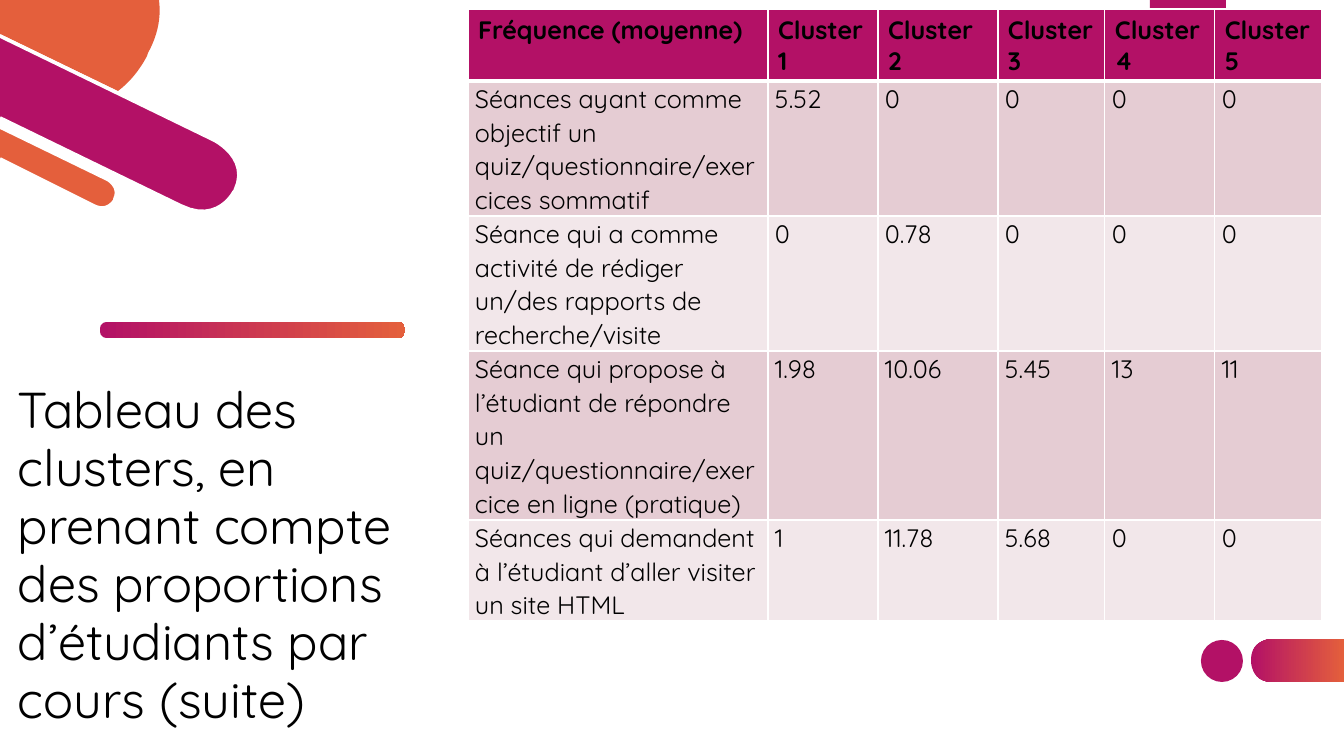
"""Build the slide with the table of cluster frequencies."""
from dataclasses import dataclass

from lxml.etree import SubElement
from pptx import Presentation
from pptx.dml.color import RGBColor
from pptx.enum.shapes import MSO_SHAPE
from pptx.enum.text import MSO_ANCHOR
from pptx.oxml.ns import qn
from pptx.util import Emu, Pt

TITLE = "Tableau des clusters, en prenant compte des proportions d’étudiants par cours (suite)"
HEADER = ["Fréquence (moyenne)", *(f"Cluster {n}" for n in range(1, 6))]
FREQUENCIES = [
    ("Séances ayant comme objectif un quiz/questionnaire/exercices sommatif",
     "5.52", "0", "0", "0", "0"),
    ("Séance qui a comme activité de rédiger un/des rapports de recherche/visite",
     "0", "0.78", "0", "0", "0"),
    ("Séance qui propose à l’étudiant de répondre un quiz/questionnaire/exercice en ligne (pratique)",
     "1.98", "10.06", "5.45", "13", "11"),
    ("Séances qui demandent à l’étudiant d’aller visiter un site HTML",
     "1", "11.78", "5.68", "0", "0"),
]
COLUMN_WIDTHS = (300, 110, 120, 107, 110, 107)
ROW_HEIGHTS = (72, 135, 135, 169, 101)

# Outlines hold points (x, y) and curves (x1, y1, x2, y2, x, y).
ORANGE_DISC = [(0, 0), (159, 0), (161, 15, 159, 33, 148, 53), (147, 56),
               (147, 56, 137, 77, 118, 91), (0, 34)]
ORANGE_BAND = [(0, 127), (107, 179), (107, 179, 121, 186, 115, 199), (115, 200),
               (115, 200, 108, 213, 94, 206), (0, 159)]
MAGENTA_BAND = [(0, 36), (214, 140), (214, 140, 251, 158, 235, 191), (234, 192),
                (234, 192, 218, 224, 181, 206), (0, 118)]
PILL = [(1344, 639), (1272, 639), (1272, 639, 1251, 639, 1251, 660), (1251, 661),
        (1251, 661, 1251, 682, 1272, 682), (1344, 682)]


@dataclass(frozen=True)
class Theme:
    magenta: str = "B31166"
    orange: str = "E45F3C"
    white: str = "FFFFFF"
    ink: str = "000000"
    bands: tuple = ("E5CCD3", "F2E7EA")
    font: str = "Quicksand"
    title_size: int = 36
    table_size: int = 18
    edge_width: float = 2.6


THEME = Theme()


def px(length):
    return Emu(round(length * 914400 / 100.8))


def color(code):
    return RGBColor.from_string(code)


def write(frame, text, *, size, bold=False, spacing=None):
    frame.word_wrap = True
    paragraph = frame.paragraphs[0]
    if spacing:
        paragraph.line_spacing = spacing
    run = paragraph.add_run()
    run.text = text
    run.font.name = THEME.font
    run.font.size = Pt(size)
    run.font.bold = bold
    run.font.color.rgb = color(THEME.ink)


def paint(part, *fills, edge=None):
    part.shadow.inherit = False
    if len(fills) == 1:
        part.fill.solid()
        part.fill.fore_color.rgb = color(fills[0])
    else:
        part.fill.gradient()
        part.fill.gradient_angle = 0
        for stop, code in zip(part.fill.gradient_stops, fills):
            stop.color.rgb = color(code)
    if edge:
        part.line.color.rgb = color(edge)
        part.line.width = Pt(THEME.edge_width)
    else:
        part.line.fill.background()


def curve_points(start, curve, steps=12):
    xs, ys = (start[0], *curve[::2]), (start[1], *curve[1::2])
    for step in range(1, steps + 1):
        t = step / steps
        weights = ((1 - t) ** 3, 3 * t * (1 - t) ** 2, 3 * t * t * (1 - t), t ** 3)
        yield tuple(sum(w * v for w, v in zip(weights, axis)) for axis in (xs, ys))


def add_outline(shapes, outline, *fills, edge=None):
    points = [outline[0]]
    for piece in outline[1:]:
        points.extend([piece] if len(piece) == 2 else curve_points(points[-1], piece))
    corners = [(px(x), px(y)) for x, y in points]
    builder = shapes.build_freeform(*corners[0], scale=1.0)
    builder.add_line_segments(corners[1:], close=False)
    paint(builder.convert_to_shape(), *fills, edge=edge)


def add_preset(shapes, kind, box, *fills):
    part = shapes.add_shape(kind, *map(px, box))
    paint(part, *fills)
    return part


def add_borders(cell, bottom):
    properties = cell._tc.get_or_add_tcPr()
    for side, width in (("L", 1), ("R", 1), ("T", 1), ("B", bottom)):
        border = SubElement(properties, qn(f"a:ln{side}"), w=str(Pt(width)))
        solid = SubElement(border, qn("a:solidFill"))
        SubElement(solid, qn("a:srgbClr"), val=THEME.white)


def add_frequency_table(shapes):
    rows = [HEADER, *FREQUENCIES]
    table = shapes.add_table(len(rows), len(HEADER), px(468), px(9),
                             px(sum(COLUMN_WIDTHS)), px(sum(ROW_HEIGHTS))).table
    for column, width in zip(table.columns, COLUMN_WIDTHS):
        column.width = px(width)
    for r, (row, height) in enumerate(zip(rows, ROW_HEIGHTS)):
        table.rows[r].height = px(height)
        for c, text in enumerate(row):
            cell = table.cell(r, c)
            add_borders(cell, bottom=1 if r else 3)
            cell.fill.solid()
            cell.fill.fore_color.rgb = color(THEME.bands[(r - 1) % 2] if r else THEME.magenta)
            if r:
                cell.margin_left = cell.margin_right = px(7)
                cell.margin_top = cell.margin_bottom = 0
            elif c:
                cell.vertical_anchor = MSO_ANCHOR.MIDDLE
            write(cell.text_frame, text, size=THEME.table_size, bold=r == 0,
                  spacing=1.07 if r else None)


def main():
    deck = Presentation()
    deck.slide_width, deck.slide_height = px(1344), px(756)
    shapes = deck.slides.add_slide(deck.slide_layouts[6]).shapes

    add_preset(shapes, MSO_SHAPE.RECTANGLE, (1150, 0, 76, 126), THEME.magenta)
    add_preset(shapes, MSO_SHAPE.OVAL, (1201, 640, 42, 42), THEME.magenta)
    add_outline(shapes, PILL, THEME.magenta, THEME.orange)
    add_outline(shapes, ORANGE_DISC, THEME.orange)
    add_outline(shapes, ORANGE_BAND, THEME.orange, edge=THEME.white)
    add_outline(shapes, MAGENTA_BAND, THEME.magenta, edge=THEME.white)
    rule = add_preset(shapes, MSO_SHAPE.ROUNDED_RECTANGLE, (100, 322, 305, 16),
                      THEME.magenta, THEME.orange)
    rule.adjustments[0] = 0.4

    title = shapes.add_textbox(px(8), px(252), px(472), px(483)).text_frame
    title.vertical_anchor = MSO_ANCHOR.BOTTOM
    write(title, TITLE, size=THEME.title_size, spacing=0.96)
    add_frequency_table(shapes)
    deck.save("out.pptx")


if __name__ == "__main__":
    main()
